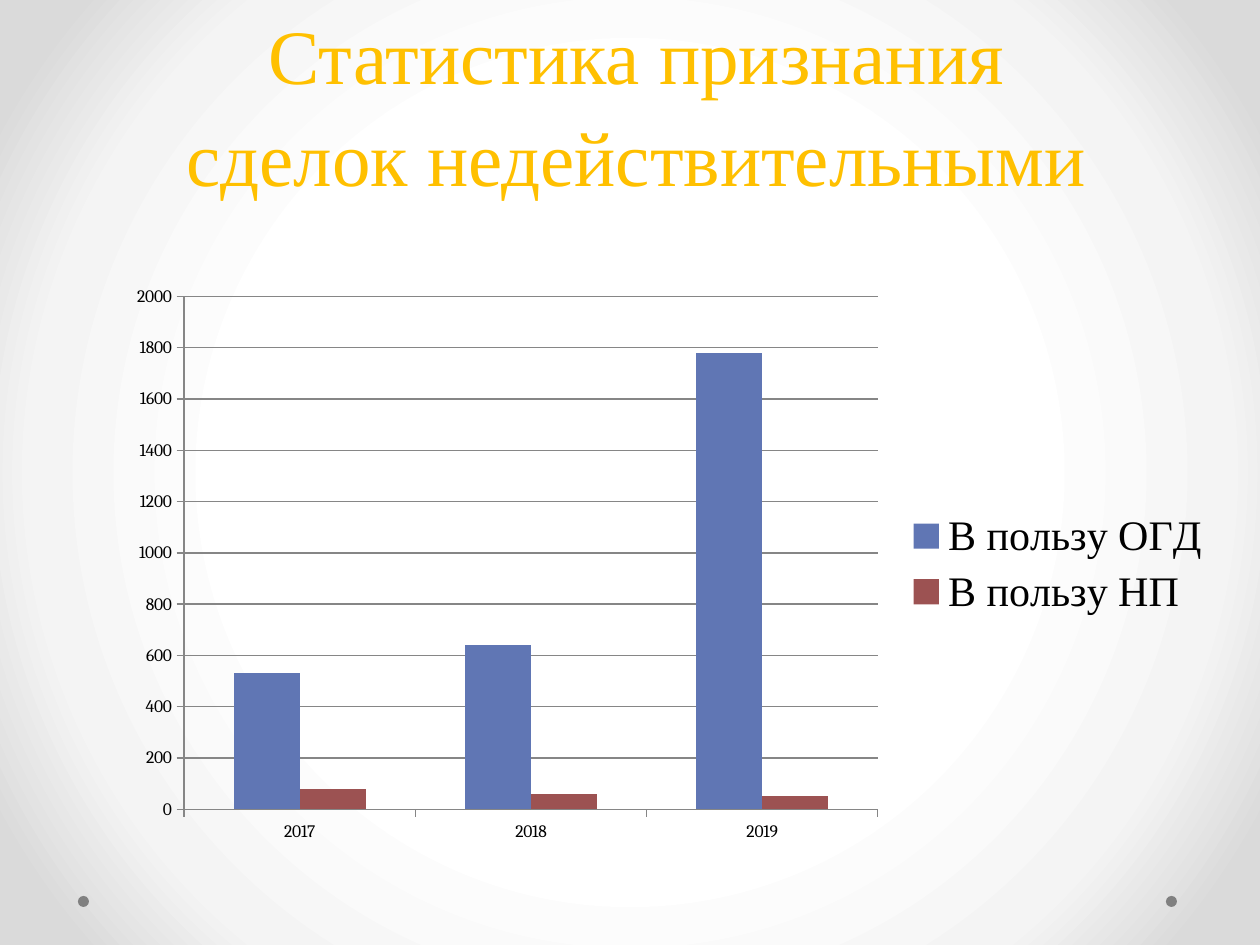
from lxml import etree
from pptx import Presentation
from pptx import util as u
from pptx.chart.data import CategoryChartData
from pptx.dml.color import RGBColor
from pptx.enum import chart as charts, shapes, text
from pptx.oxml import parse_xml
from pptx.oxml.ns import nsdecls

PX = 914400 // 126
COLORS = {
    "title": "FFC000",
    "text": "000000",
    "dot": "808080",
    "axis": "868686",
    "claims_won": "6076B4",
    "claims_lost": "9C5252",
}
BACKGROUND_STOPS = [(50, "FFFFFF"), (76, "F4F4F4"), (92, "DADADA")]
YEARS = ["2017", "2018", "2019"]
SERIES = [
    ("В пользу ОГД", [530, 640, 1780], "claims_won"),
    ("В пользу НП", [80, 60, 50], "claims_lost"),
]


def px(*lengths):
    return [u.Emu(length * PX) for length in lengths]


def color(name):
    return RGBColor.from_string(COLORS[name])


def set_font(font, size, name, color_name):
    font.size = u.Pt(size)
    font.name = name
    font.color.rgb = color(color_name)


def set_background(slide):
    stops = "".join(
        f'<a:gs pos="{position * 1000}"><a:srgbClr val="{value}"/></a:gs>'
        for position, value in BACKGROUND_STOPS
    )
    gradient = parse_xml(
        f'<a:gradFill {nsdecls("a")} rotWithShape="1"><a:gsLst>{stops}</a:gsLst>'
        '<a:path path="circle"><a:fillToRect l="50000" t="50000" r="50000" b="50000"/>'
        "</a:path></a:gradFill>"
    )
    slide.background.fill.solid()
    properties = slide.background._cSld.bg.bgPr
    properties.replace(properties[0], gradient)


def add_dot(slide, left, top, size):
    dot = slide.shapes.add_shape(
        shapes.MSO_SHAPE.OVAL, *px(left, top, size, size)
    )
    dot.shadow.inherit = False
    dot.fill.solid()
    dot.fill.fore_color.rgb = color("dot")
    dot.line.fill.background()


def set_title(slide, wording):
    title = slide.shapes.title
    title.left, title.top, title.width, title.height = px(150, 76, 973, 132)
    frame = title.text_frame
    frame.word_wrap = True
    frame.auto_size = text.MSO_AUTO_SIZE.NONE
    frame.vertical_anchor = text.MSO_ANCHOR.BOTTOM
    paragraph = frame.paragraphs[0]
    paragraph.alignment = text.PP_ALIGN.CENTER
    paragraph.line_spacing = u.Pt(58)
    run = paragraph.add_run()
    run.text = wording
    set_font(run.font, 44, "Times New Roman", "title")


def format_axis(axis):
    axis.major_tick_mark = charts.XL_TICK_MARK.OUTSIDE
    axis.minor_tick_mark = charts.XL_TICK_MARK.NONE
    axis.format.line.color.rgb = color("axis")
    axis.format.line.width = u.Pt(0.75)


def add_column_chart(slide):
    data = CategoryChartData()
    data.categories = YEARS
    for name, values, _ in SERIES:
        data.add_series(name, values)
    chart = slide.shapes.add_chart(
        charts.XL_CHART_TYPE.COLUMN_CLUSTERED, *px(115, 275, 1111, 578), data
    ).chart
    chart.has_title = False
    set_font(chart.font, 10, "Cambria", "text")

    format_axis(chart.category_axis)
    value_axis = chart.value_axis
    format_axis(value_axis)
    value_axis.minimum_scale = 0
    value_axis.maximum_scale = 2000
    value_axis.major_unit = 200
    value_axis.has_major_gridlines = True
    gridlines = value_axis.major_gridlines.format.line
    gridlines.color.rgb = color("axis")
    gridlines.width = u.Pt(0.75)

    plot = chart.plots[0]
    plot.gap_width = 150
    plot.overlap = 0
    plot.vary_by_categories = False
    for series, (_, _, color_name) in zip(plot.series, SERIES):
        series.format.fill.solid()
        series.format.fill.fore_color.rgb = color(color_name)

    chart.has_legend = True
    chart.legend.position = charts.XL_LEGEND_POSITION.RIGHT
    chart.legend.include_in_layout = False
    set_font(chart.legend.font, 24, "Times New Roman", "text")


def main():
    presentation = Presentation()
    presentation.slide_width, presentation.slide_height = px(1260, 945)
    slide = presentation.slides.add_slide(presentation.slide_layouts[5])
    set_background(slide)
    for left in (1166, 78):
        add_dot(slide, left, 896, 11)
    set_title(slide, "Статистика признания сделок недействительными")
    add_column_chart(slide)
    presentation.save("out.pptx")


if __name__ == "__main__":
    main()
